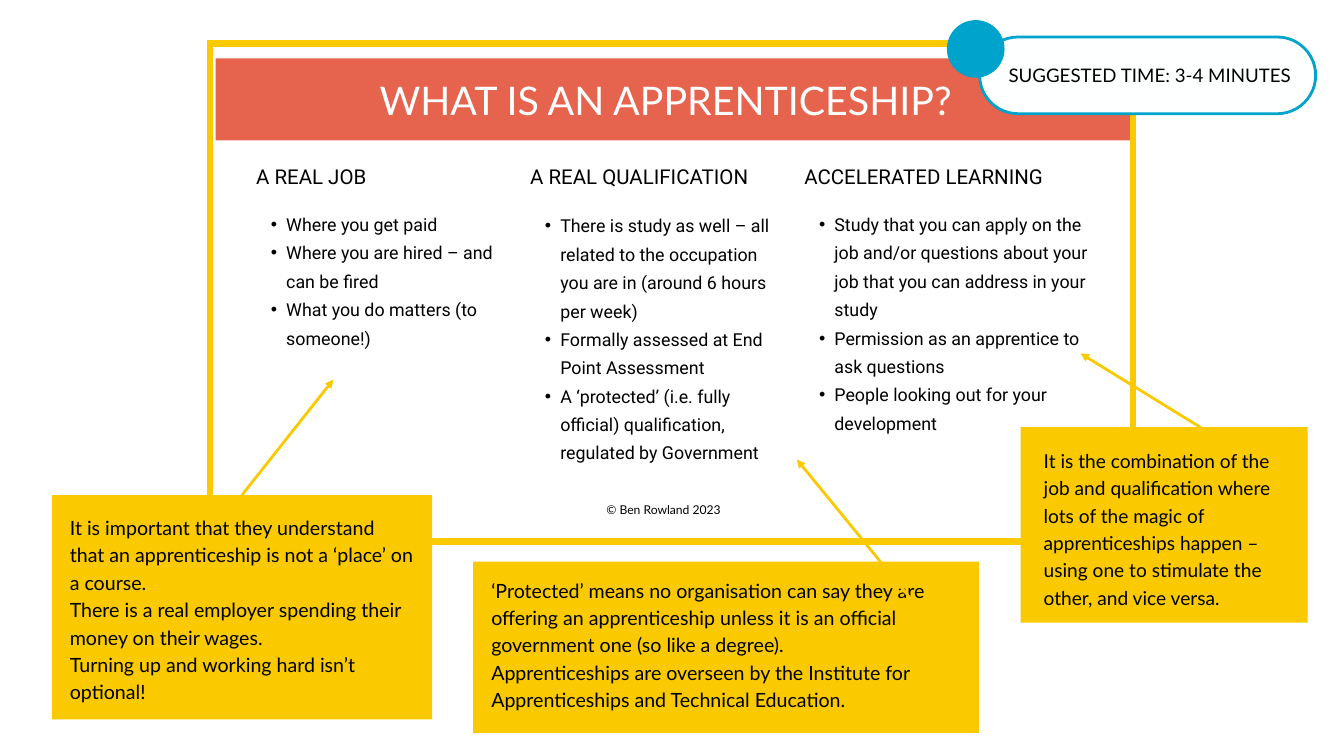
from pptx import Presentation
from pptx.dml.color import RGBColor
from pptx.enum.shapes import MSO_CONNECTOR as Link, MSO_SHAPE as Kind
from pptx.enum.text import MSO_ANCHOR as Anchor, PP_ALIGN as Align
from pptx.oxml.xmlchemy import OxmlElement as Element
from pptx.util import Cm, Pt

GOLD, BLUE, RED, BLACK, WHITE = "FBC900", "00A3CC", "E6634D", "000000", "FFFFFF"


def tint(code):
    return RGBColor.from_string(code)


def add(parent, tag, **attrs):
    node = Element(tag)
    for key, value in attrs.items():
        node.set(key, value)
    parent.append(node)
    return node


class Board:
    """Holds the slide and its style, and draws each kind of element."""

    def __init__(self, slide):
        self.slide = slide
        self.shapes = slide.shapes
        self.indent = Cm(1.14)
        self.hang = Cm(-0.58)

    def block(self, kind, box, fill=None, line=None, width=3):
        shape = self.shapes.add_shape(kind, *map(Cm, box))
        shape.shadow.inherit = False
        if fill:
            shape.fill.solid()
            shape.fill.fore_color.rgb = tint(fill)
        else:
            shape.fill.background()
        if line:
            shape.line.color.rgb = tint(line)
            shape.line.width = Pt(width)
            add(shape.line._get_or_add_ln(), "a:miter", lim="800000")
        else:
            shape.line.fill.background()
        return shape

    def text(self, box, lines, size, lead, face="Lato", color=BLACK,
             align=Align.LEFT, bullet=False):
        frame = self.shapes.add_textbox(*map(Cm, box)).text_frame
        frame.word_wrap = True
        frame.vertical_anchor = Anchor.TOP
        frame.margin_left = frame.margin_right = 0
        frame.margin_top = frame.margin_bottom = 0
        for count, line in enumerate(lines):
            para = frame.add_paragraph() if count else frame.paragraphs[0]
            para.alignment = align
            para.line_spacing = Pt(lead)
            if bullet:
                self.bullet(para)
            run = para.add_run()
            run.text = line
            run.font.name = face
            run.font.size = Pt(size)
            run.font.color.rgb = tint(color)

    def bullet(self, para):
        para.level = 1
        props = para._p.get_or_add_pPr()
        props.set("marL", str(self.indent))
        props.set("indent", str(self.hang))
        add(props, "a:buFont", typeface="Arial")
        add(props, "a:buChar", char="•")

    def arrow(self, start, end):
        link = self.shapes.add_connector(
            Link.STRAIGHT, *map(Cm, start), *map(Cm, end))
        link.line.color.rgb = tint(GOLD)
        link.line.width = Pt(3)
        add(link.line._get_or_add_ln(), "a:tailEnd", type="triangle")
        add(link._element.spPr, "a:effectLst")

    def column(self, left, top, width, head, points):
        self.text((left, 6.3, width, 0.89), [head], 21.9, 24, "Roboto")
        self.text((left, top, width, 8), points, 19.1, 30.4, "Roboto",
                  bullet=True)

    def note(self, box, inner, size, lines, start, end):
        self.block(Kind.RECTANGLE, box, GOLD)
        self.text(inner, lines, size, 29.4)
        self.arrow(start, end)


COLUMNS = [
    (7.82, 9.63, "A REAL JOB", [
        "Where you get paid",
        "Where you are hired – and can be fired",
        "What you do matters (to someone!)"]),
    (7.87, 9.63, "A REAL QUALIFICATION", [
        "There is study as well – all related to the occupation you are in "
        "(around 6 hours per week)",
        "Formally assessed at End Point Assessment",
        "A ‘protected’ (i.e. fully official) qualification, regulated by "
        "Government"]),
    (7.82, 10.92, "ACCELERATED LEARNING", [
        "Study that you can apply on the job and/or questions about your job "
        "that you can address in your study",
        "Permission as an apprentice to ask questions",
        "People looking out for your development"]),
]

NOTES = [
    ((1.96, 18.72, 14.38, 8.48), (2.64, 19.35, 13, 7.21), 21, [
        "It is important that they understand that an apprenticeship is not "
        "a ‘place’ on a course.",
        "There is a real employer spending their money on their wages.",
        "Turning up and working hard isn’t optional!"],
     (9.14, 18.72), (12.6, 14.35)),
    ((17.88, 21.23, 19.13, 6.48), (18.57, 21.72, 17.22, 5.13), 21, [
        "‘Protected’ means no organisation can say they are offering an "
        "apprenticeship unless it is an official government one (so like a "
        "degree).",
        "Apprenticeships are overseen by the Institute for Apprenticeships "
        "and Technical Education."],
     (35.79, 24.31), (30.12, 17.37)),
    ((38.58, 16.15, 10.85, 7.39), (39.45, 16.81, 9.09, 6.17), 20.5, [
        "It is the combination of the job and qualification where lots of "
        "the magic of apprenticeships happen – using one to stimulate the "
        "other, and vice versa."],
     (45.9, 16.48), (40.84, 13.36)),
]


def main():
    deck = Presentation()
    deck.slide_width, deck.slide_height = Cm(50.8), Cm(28.58)
    board = Board(deck.slides.add_slide(deck.slide_layouts[6]))

    for count, (top, width, head, points) in enumerate(COLUMNS):
        board.column(9.68 + count * 10.36, top, width, head, points)
    board.text((22.91, 18.9, 4.34, 0.61), ["© Ben Rowland 2023"], 13, 18.2,
               align=Align.CENTER)

    board.block(Kind.RECTANGLE, (8.15, 2.21, 34.7, 3.1), RED)
    board.text((14.35, 3.02, 22.25, 1.73), ["WHAT IS AN APPRENTICESHIP?"],
               42.2, 46.5, color=WHITE)
    board.block(Kind.RECTANGLE, (7.95, 1.65, 34.88, 18.82), line=GOLD,
                width=6.75)

    pill = board.block(Kind.ROUNDED_RECTANGLE, (37.03, 1.4, 12.7, 2.9),
                       "FEFFFF", BLUE)
    pill.adjustments[0] = 0.5
    board.block(Kind.OVAL, (35.79, 0.76, 2.18, 2.18), BLUE)
    board.text((37.44, 2.29, 12.04, 0.97), ["SUGGESTED TIME: 3-4 MINUTES"],
               20, 28, align=Align.CENTER)

    for note in NOTES:
        board.note(*note)
    deck.save("out.pptx")


if __name__ == "__main__":
    main()
